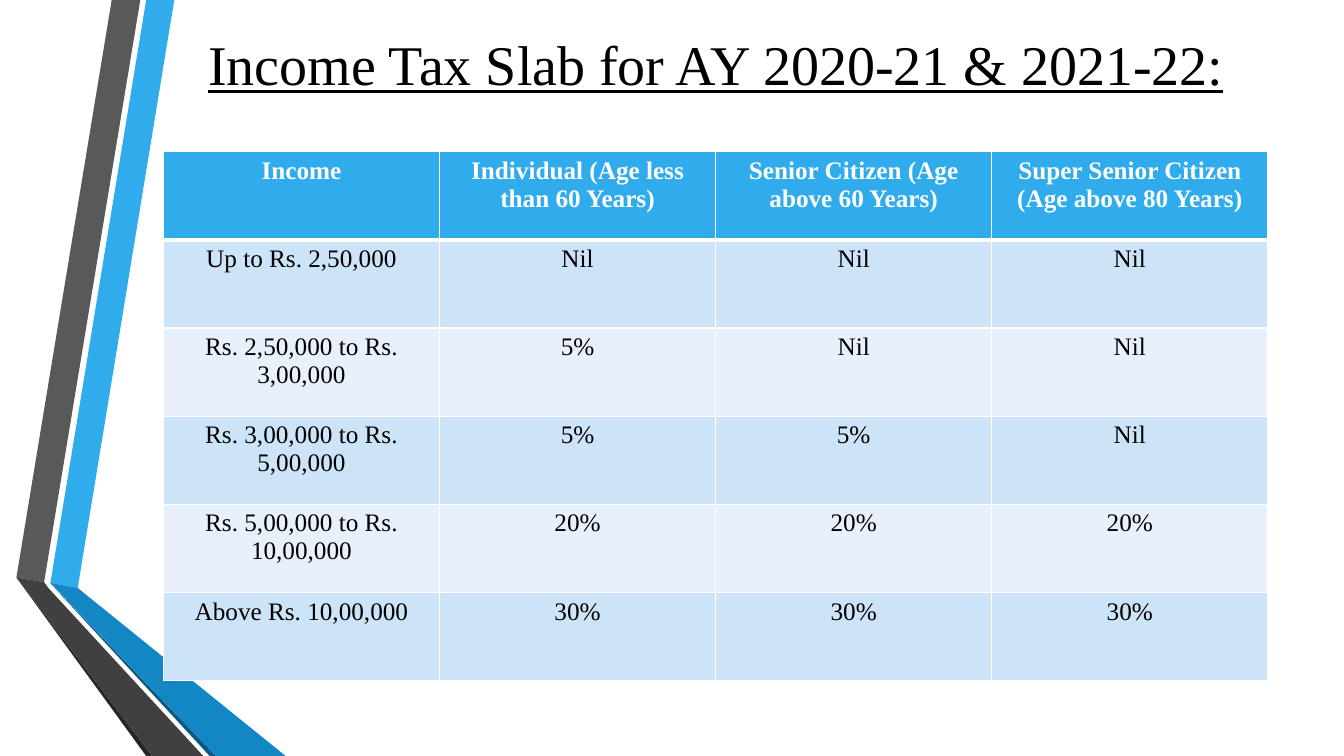
import pptx
import pptx.dml.color
import pptx.enum.text
import pptx.oxml
import pptx.oxml.ns
import pptx.util

COLS, ROWS = 160, 90
RIBBONS = [
    ("30ACEC", [(6, 69.4), (9.25, 70), (20.75, 0), (17.4, 0)]),
    ("595959", [(16.7, 0), (13.3, 0), (1.95, 68.75), (5.25, 69.3)]),
    ("262626", [(1.95, 68.75), (17.4, 90), (18.1, 90)]),
    ("0C5A82", [(6, 69.45), (24.95, 90), (25.7, 90)]),
    ("1287C3", [(6, 69.4), (25.7, 90), (34, 90), (9.25, 70)]),
    ("404040", [(24.2, 90), (5.75, 70), (5.25, 69.3), (1.95, 68.75), (18.1, 90)]),
]
SLABS = [
    ["Income", "Individual (Age less than 60 Years)",
     "Senior Citizen (Age above 60 Years)", "Super Senior Citizen (Age above 80 Years)"],
    ["Up to Rs. 2,50,000", "Nil", "Nil", "Nil"],
    ["Rs. 2,50,000 to Rs. 3,00,000", "5%", "Nil", "Nil"],
    ["Rs. 3,00,000 to Rs. 5,00,000", "5%", "5%", "Nil"],
    ["Rs. 5,00,000 to Rs. 10,00,000", "20%", "20%", "20%"],
    ["Above Rs. 10,00,000", "30%", "30%", "30%"],
]


def rgb(value):
    return pptx.dml.color.RGBColor.from_string(value)


def write(tf, text, font="Times New Roman", size=18, color="000000", bold=False, underline=False):
    tf.word_wrap = True
    p = tf.paragraphs[0]
    p.alignment = pptx.enum.text.PP_ALIGN.CENTER
    r = p.add_run()
    r.text = text
    r.font.name = font
    r.font.size = pptx.util.Pt(size)
    r.font.bold = bold
    r.font.underline = underline
    r.font.color.rgb = rgb(color)


def set_border(cell, side, color, width):
    ns = pptx.oxml.ns.nsdecls("a")
    return pptx.oxml.parse_xml(
        f'<a:ln{side} {ns} w="{pptx.util.Pt(width)}"><a:solidFill>'
        f'<a:srgbClr val="{color}"/></a:solidFill></a:ln{side}>')


class Deck:
    header, bands, border = "30ACEC", ("E8F1FB", "CDE3F8"), "FFFFFF"

    def __init__(self):
        self.prs = pptx.Presentation()
        self.prs.slide_width = pptx.util.Inches(13.33)
        self.prs.slide_height = pptx.util.Inches(7.5)
        self.s = self.prs.slides.add_slide(self.prs.slide_layouts[6])

    def x(self, cols):
        return round(self.prs.slide_width * cols / COLS)

    def y(self, rows):
        return round(self.prs.slide_height * rows / ROWS)

    def box(self, left, top, width, height):
        return self.x(left), self.y(top), self.x(width), self.y(height)

    def ribbon(self, color, points):
        start, *rest = [(self.x(col), self.y(row)) for col, row in points]
        builder = self.s.shapes.build_freeform(*start)
        builder.add_line_segments(rest)
        sp = builder.convert_to_shape()
        sp.shadow.inherit = False
        sp.fill.solid()
        sp.fill.fore_color.rgb = rgb(color)
        sp.line.fill.background()

    def title(self, text, *place):
        tf = self.s.shapes.add_textbox(*self.box(*place)).text_frame
        tf.margin_top = self.y(2)
        write(tf, text, size=40, underline=True)

    def table(self, data, *place):
        frame = self.s.shapes.add_table(len(data), len(data[0]), *self.box(*place))
        for i, row in enumerate(data):
            for j, text in enumerate(row):
                self.cell(frame.table.cell(i, j), i, text)

    def cell(self, cell, row, text):
        head = row == 0
        cell.fill.solid()
        cell.fill.fore_color.rgb = rgb(self.header if head else self.bands[row % 2])
        write(cell.text_frame, text, color="FFFFFF" if head else "000000", bold=head)
        widths = {"L": 1, "R": 1, "T": 3 if row == 1 else 1, "B": 3 if head else 1}
        tc_pr = cell._tc.get_or_add_tcPr()
        for k, (side, width) in enumerate(widths.items()):
            tc_pr.insert(k, set_border(cell, side, self.border, width))


def main():
    deck = Deck()
    for color, points in RIBBONS:
        deck.ribbon(color, points)
    deck.title("Income Tax Slab for AY 2020-21 & 2021-22:", 19.45, 1.55, 131.5, 18.6)
    deck.table(SLABS, 19.45, 18.05, 131.5, 63)
    deck.prs.save("out.pptx")


if __name__ == "__main__":
    main()
